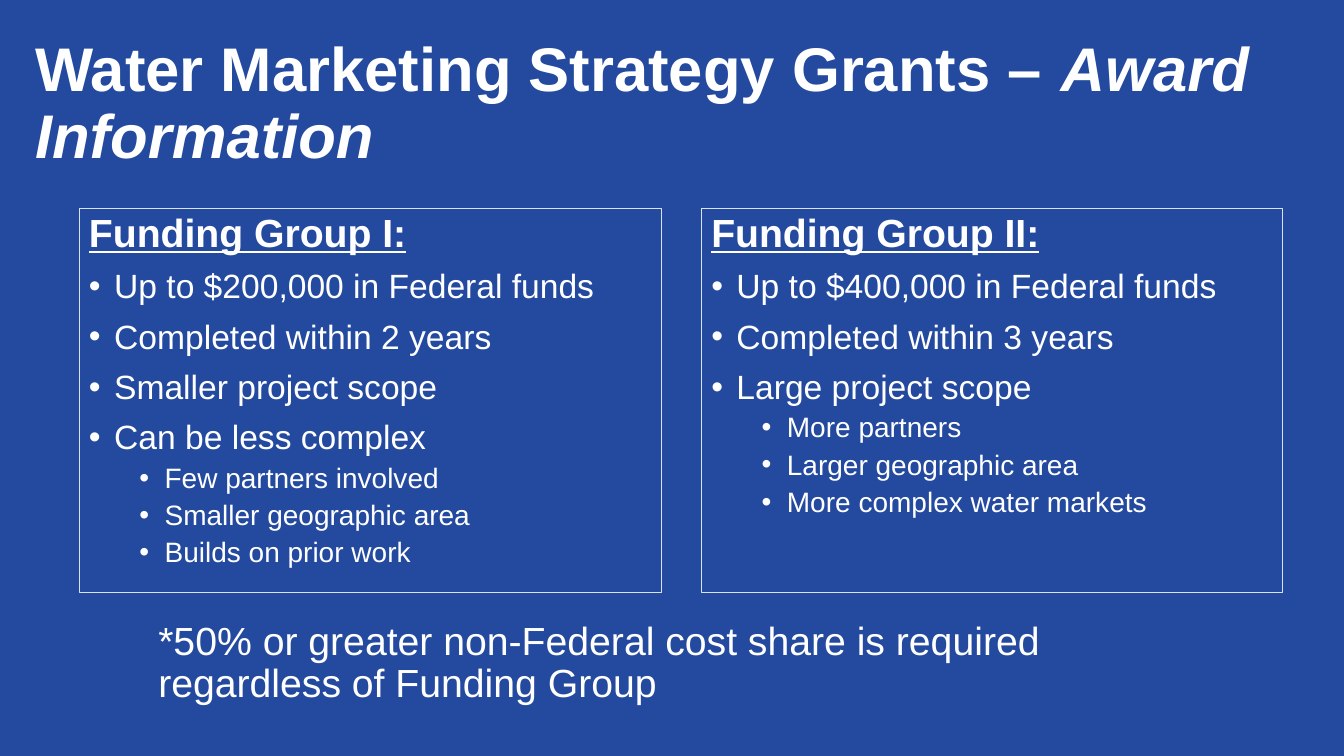
from dataclasses import dataclass

from lxml.etree import SubElement
from pptx import Presentation
from pptx.dml.color import RGBColor
from pptx.enum.shapes import MSO_SHAPE
from pptx.enum.text import MSO_ANCHOR, PP_ALIGN
from pptx.oxml.ns import qn
from pptx.util import Pt


@dataclass(frozen=True)
class Theme:
    background: RGBColor = RGBColor(0x24, 0x4A, 0x9F)
    text: RGBColor = RGBColor(0xFF, 0xFF, 0xFF)
    outline: RGBColor = RGBColor(0xDA, 0xE3, 0xF3)
    font: str = "Arial"
    title: int = 44
    heading: int = 28
    bullet: int = 24
    sub_bullet: int = 20
    note: int = 28


theme = Theme()


def add_run(paragraph, text, size, bold=False, italic=False, underline=False):
    paragraph.alignment = PP_ALIGN.LEFT
    paragraph.line_spacing = 0.9
    run = paragraph.add_run()
    run.text = text
    run.font.name = theme.font
    run.font.size = Pt(size)
    run.font.color.rgb = theme.text
    run.font.bold = bold
    run.font.italic = italic
    run.font.underline = underline


def add_bullet(text_frame, text, level):
    paragraph = text_frame.add_paragraph()
    paragraph.level = level
    properties = paragraph._p.get_or_add_pPr()
    properties.set("marL", str(Pt(18 + 36 * level)))
    properties.set("indent", str(Pt(-18)))
    SubElement(properties, qn("a:buFont"), typeface=theme.font)
    SubElement(properties, qn("a:buChar"), char="•")
    paragraph.space_before = Pt(5 if level else 10)
    add_run(paragraph, text, theme.sub_bullet if level else theme.bullet)


presentation = Presentation()
presentation.slide_width = Pt(960)
presentation.slide_height = Pt(540)
slide = presentation.slides.add_slide(presentation.slide_layouts[6])
slide.background.fill.solid()
slide.background.fill.fore_color.rgb = theme.background

title = slide.shapes.add_textbox(Pt(18), Pt(23), Pt(921.6), Pt(104.4))
title.text_frame.word_wrap = True
title.text_frame.vertical_anchor = MSO_ANCHOR.MIDDLE
title_paragraph = title.text_frame.paragraphs[0]
add_run(title_paragraph, "Water Marketing Strategy Grants – ", theme.title, bold=True)
add_run(title_paragraph, "Award Information", theme.title, bold=True, italic=True)

funding_groups = [
    (56.5, 416, "Funding Group I:", [
        ("Up to $200,000 in Federal funds", 0),
        ("Completed within 2 years", 0),
        ("Smaller project scope", 0),
        ("Can be less complex", 0),
        ("Few partners involved", 1),
        ("Smaller geographic area", 1),
        ("Builds on prior work", 1),
    ]),
    (501, 415, "Funding Group II:", [
        ("Up to $400,000 in Federal funds", 0),
        ("Completed within 3 years", 0),
        ("Large project scope", 0),
        ("More partners", 1),
        ("Larger geographic area", 1),
        ("More complex water markets", 1),
    ]),
]

for left, width, heading, bullets in funding_groups:
    shape = slide.shapes.add_shape(
        MSO_SHAPE.RECTANGLE, Pt(left), Pt(149), Pt(width), Pt(274.3))
    shape.shadow.inherit = False
    shape.fill.background()
    shape.line.color.rgb = theme.outline
    shape.line.width = Pt(0.75)
    text_frame = shape.text_frame
    text_frame.word_wrap = True
    text_frame.vertical_anchor = MSO_ANCHOR.TOP
    add_run(text_frame.paragraphs[0], heading, theme.heading, bold=True, underline=True)
    for text, level in bullets:
        add_bullet(text_frame, text, level)

note = slide.shapes.add_textbox(Pt(106), Pt(440.6), Pt(745), Pt(64))
note.text_frame.word_wrap = True
add_run(
    note.text_frame.paragraphs[0],
    "*50% or greater non-Federal cost share is required regardless of Funding Group",
    theme.note)

presentation.save("out.pptx")
